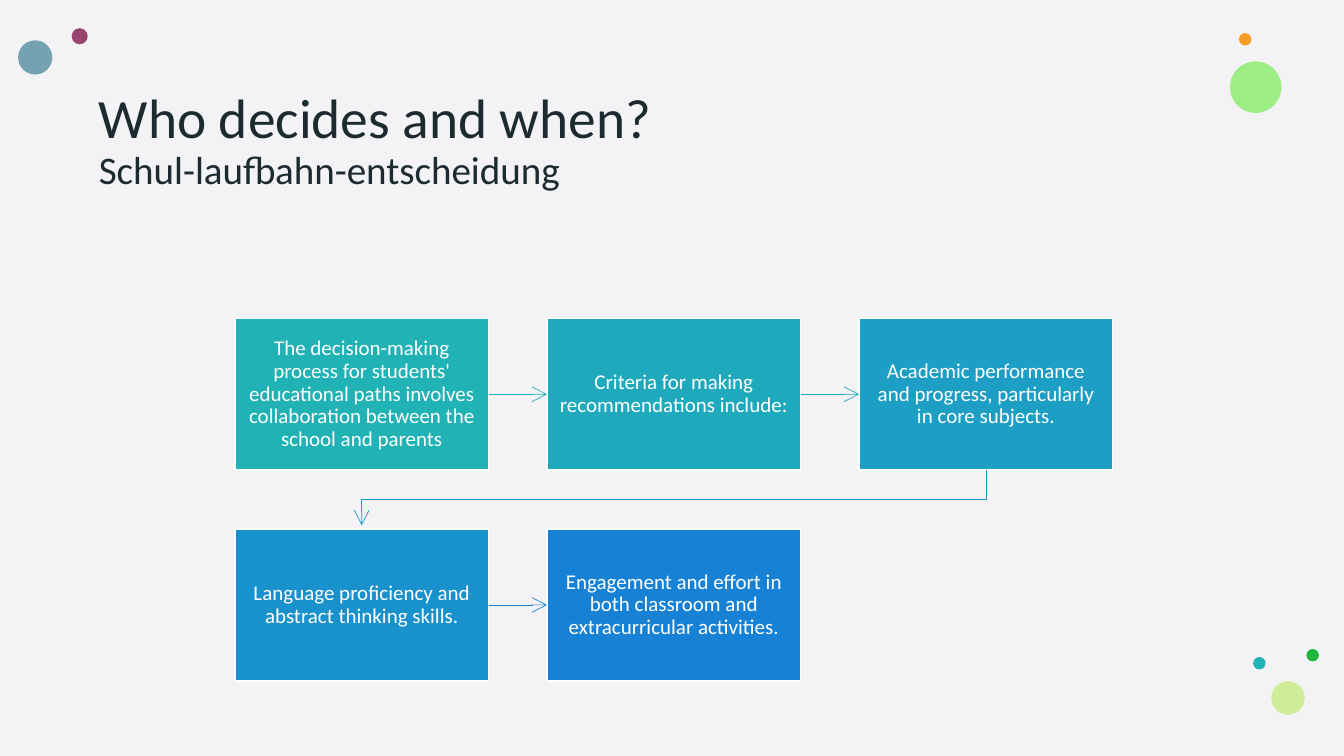
from lxml import etree
from pptx import Presentation
from pptx.dml.color import RGBColor
from pptx.enum.shapes import MSO_CONNECTOR, MSO_SHAPE
from pptx.enum.text import MSO_ANCHOR, MSO_AUTO_SIZE, PP_ALIGN
from pptx.oxml.ns import qn
from pptx.util import Inches, Pt

RECT, OVAL = MSO_SHAPE.RECTANGLE, MSO_SHAPE.OVAL
STRAIGHT = MSO_CONNECTOR.STRAIGHT
LEFT, CENTER = PP_ALIGN.LEFT, PP_ALIGN.CENTER
MIDDLE, NO_FIT = MSO_ANCHOR.MIDDLE, MSO_AUTO_SIZE.NONE

WHITE = RGBColor(0xFF, 0xFF, 0xFF)
MIST = RGBColor(0xF3, 0xF2, 0xF5)
INK = RGBColor(0x1B, 0x2B, 0x30)
TEAL = RGBColor(0x20, 0xB2, 0xB5)
AQUA = RGBColor(0x1E, 0xA9, 0xBD)
CYAN = RGBColor(0x1C, 0x9E, 0xC5)
SKY = RGBColor(0x19, 0x91, 0xCD)
BLUE = RGBColor(0x17, 0x82, 0xD5)
BEND = RGBColor(0x1A, 0x96, 0xCA)
PLUM = RGBColor(0x97, 0x44, 0x6E)
LIGHT = RGBColor(0x7B, 0xED, 0x59)
AMBER = RGBColor(0xF3, 0x9E, 0x29)
SLATE = RGBColor(0x74, 0xA2, 0xB1)
GREEN = RGBColor(0x21, 0xB7, 0x3D)
LIME = RGBColor(0xCF, 0xED, 0x98)


def write(frame, *lines, font="Calibri", color=WHITE, align=CENTER):
    """Fill a frame with one paragraph for each (words, size) pair."""
    frame.word_wrap = True
    frame.auto_size = NO_FIT
    frame.vertical_anchor = MIDDLE
    for i, (words, size) in enumerate(lines):
        para = frame.paragraphs[0] if i == 0 else frame.add_paragraph()
        para.alignment = align
        para.line_spacing = 0.9
        para.space_before = Pt(0)
        run = para.add_run()
        run.text = words
        run.font.name = font
        run.font.size = Pt(size)
        run.font.color.rgb = color


class Deck:
    """Slide and style; lengths are percentages of the slide's size."""

    # Grid of steps: first edge, pitch and size of a cell
    COLS = (17.48, 23.22, 18.87)
    ROWS = (42.1, 27.87, 20.1)

    def __init__(self):
        self.prs = Presentation()
        self.prs.slide_width = Inches(13.33)
        self.prs.slide_height = Inches(7.5)
        self.slide = self.prs.slides.add_slide(self.prs.slide_layouts[5])
        self.shapes = self.slide.shapes
        back = self.slide.background.fill
        back.solid()
        back.fore_color.rgb = MIST

    def x(self, part):
        return round(self.prs.slide_width * part / 100)

    def y(self, part):
        return round(self.prs.slide_height * part / 100)

    def shape(self, kind, left, top, wide, high, color):
        item = self.shapes.add_shape(kind, left, top, wide, high)
        item.shadow.inherit = False
        item.fill.solid()
        item.fill.fore_color.rgb = color
        item.line.fill.background()
        return item

    def title(self, *lines):
        item = self.shapes.title
        item.left, item.top = self.x(6.6), self.y(5.6)
        item.width, item.height = self.x(88.37), self.y(26.27)
        write(item.text_frame, *lines, color=INK, align=LEFT)

    def dot(self, mid_x, mid_y, size, color, alpha=100):
        wide = self.x(size)
        item = self.shape(OVAL, self.x(mid_x) - wide // 2,
                          self.y(mid_y) - wide // 2, wide, wide, color)
        if alpha < 100:
            tint = item.element.spPr.find(qn("a:solidFill"))[0]
            etree.SubElement(tint, qn("a:alpha"), val=str(alpha * 1000))

    def step(self, col, row, color, words):
        left, step_x, wide = self.COLS
        top, step_y, high = self.ROWS
        box = self.shape(RECT, self.x(left + col * step_x),
                         self.y(top + row * step_y),
                         self.x(wide), self.y(high), color)
        box.line.color.rgb = WHITE
        box.line.width = Pt(1)
        frame = box.text_frame
        frame.margin_left = frame.margin_right = Inches(0.12)
        frame.margin_top = frame.margin_bottom = Inches(0.13)
        write(frame, (words, 15))
        return box

    def point(self, item, color):
        """Style a line and give it an open arrowhead."""
        item.line.color.rgb = color
        item.line.width = Pt(0.5)
        line = item.element.spPr.find(qn("a:ln"))
        etree.SubElement(line, qn("a:tailEnd"), type="arrow", w="lg", len="lg")

    def arrow(self, start, end, color):
        item = self.shapes.add_connector(STRAIGHT, 0, 0, 0, 0)
        item.begin_connect(start, 3)
        item.end_connect(end, 1)
        self.point(item, color)
        etree.SubElement(item.element.spPr, qn("a:effectLst"))

    def turn(self, start, end, color):
        """Lead from the foot of one box to the head of a box below."""
        from_x = start.left + start.width // 2
        to_x = end.left + end.width // 2
        foot = start.top + start.height
        half = (foot + end.top) // 2
        route = self.shapes.build_freeform(from_x, foot)
        tip = end.top - self.y(0.5)
        route.add_line_segments(
            [(from_x, half), (to_x, half), (to_x, tip)], close=False)
        item = route.convert_to_shape()
        item.shadow.inherit = False
        item.fill.background()
        self.point(item, color)


def main():
    deck = Deck()

    # Corner dots
    for dot in [
        (5.93, 4.8, 1.2, PLUM),
        (93.43, 11.53, 3.83, LIGHT, 72),
        (92.65, 5.2, 0.93, AMBER),
        (2.62, 7.6, 2.55, SLATE),
        (97.67, 86.67, 0.93, GREEN),
        (95.84, 92.33, 2.5, LIME),
        (93.7, 87.73, 0.93, TEAL),
    ]:
        deck.dot(*dot)

    # Title
    deck.title(("Who decides and when?", 39.6),
               ("Schul-laufbahn-entscheidung", 27.9))

    # Steps, three to a row
    steps = [
        (TEAL, "The decision-making process for students' educational paths "
               "involves collaboration between the school and parents"),
        (AQUA, "Criteria for making recommendations include:"),
        (CYAN, "Academic performance and progress, particularly in core "
               "subjects."),
        (SKY, "Language proficiency and abstract thinking skills."),
        (BLUE, "Engagement and effort in both classroom and extracurricular "
               "activities."),
    ]
    boxes = [deck.step(i % 3, i // 3, color, words)
             for i, (color, words) in enumerate(steps)]

    # Arrows from step to step
    for i, color in enumerate((TEAL, AQUA, BEND, BLUE)):
        link = deck.turn if i % 3 == 2 else deck.arrow
        link(boxes[i], boxes[i + 1], color)

    deck.prs.save("out.pptx")


if __name__ == "__main__":
    main()
